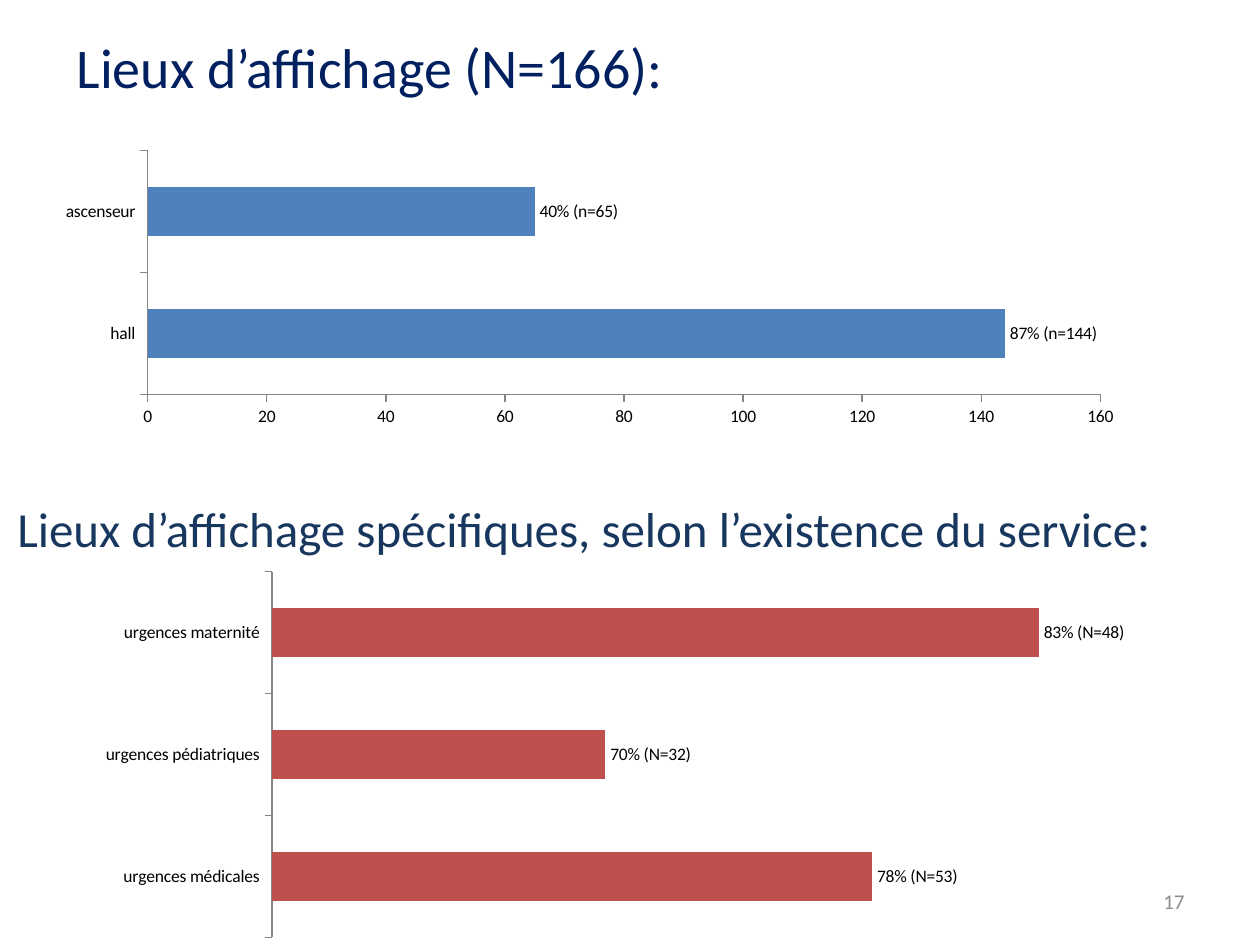
from dataclasses import dataclass

from lxml import etree
from pptx import Presentation, util as u
from pptx.chart.data import CategoryChartData
from pptx.dml.color import RGBColor
from pptx.enum import chart as ch, text as tx
from pptx.oxml.ns import qn


@dataclass(frozen=True)
class Theme:
    face: str = "Calibri"
    ink: str = "000000"
    navy: str = "002060"
    slate: str = "17375E"
    gray: str = "8C8C8C"
    rule: str = "868686"
    blue: str = "4F81BD"
    red: str = "C0504D"
    head: int = 32
    sub: int = 28
    foot: int = 12
    tiny: int = 10


class Deck:
    """Holds the theme and the current slide; boxes are shares of its size."""

    def __init__(self, theme, wide=10, high=7.5):
        self.theme = theme
        self.prs = Presentation()
        self.prs.slide_width = u.Inches(wide)
        self.prs.slide_height = u.Inches(high)
        self.page = self.prs.slides.add_slide(self.prs.slide_layouts[6])

    def place(self, box):
        wide, high = self.prs.slide_width, self.prs.slide_height
        return [round(part * side) for part, side in zip(box, (wide, high) * 2)]

    def style(self, font, size, color):
        for key, val in {"name": self.theme.face, "size": u.Pt(size)}.items():
            setattr(font, key, val)
        font.color.rgb = RGBColor.from_string(color)

    def text(self, box, words, size, color, align=None, **form):
        frame = self.page.shapes.add_textbox(*self.place(box)).text_frame
        for key, val in {"word_wrap": True, **form}.items():
            setattr(frame, key, val)
        para = frame.paragraphs[0]
        para.alignment = align
        run = para.add_run()
        run.text = words
        self.style(run.font, size, color)

    def bars(self, box, rows, color, plot, span, step=None, fmt="General"):
        """Draw rows of (category, value, label), from the bottom up."""
        t = self.theme
        data = CategoryChartData(number_format=fmt)
        data.categories = [row[0] for row in rows]
        data.add_series("Series 1", [row[1] for row in rows])
        chart = self.page.shapes.add_chart(
            ch.XL_CHART_TYPE.BAR_CLUSTERED, *self.place(box), data).chart
        chart.has_legend = chart.has_title = False
        self.style(chart.font, t.tiny, t.ink)

        # Axes
        for axis in (chart.category_axis, chart.value_axis):
            form = {"has_major_gridlines": False,
                    "major_tick_mark": ch.XL_TICK_MARK.OUTSIDE,
                    "minor_tick_mark": ch.XL_TICK_MARK.NONE}
            for key, val in form.items():
                setattr(axis, key, val)
            axis.format.line.color.rgb = RGBColor.from_string(t.rule)
            axis.format.line.width = u.Pt(0.75)
        scale = {"minimum_scale": span[0], "maximum_scale": span[1],
                 "major_unit": step, "visible": step is not None}
        for key, val in scale.items():
            setattr(chart.value_axis, key, val)
        chart.value_axis.tick_labels.number_format = fmt
        chart.value_axis.tick_labels.number_format_is_linked = False

        # Bars and their labels
        group = chart.plots[0]
        group.gap_width, group.vary_by_categories = 150, False
        series = group.series[0]
        series.format.fill.solid()
        series.format.fill.fore_color.rgb = RGBColor.from_string(color)
        labels = series.data_labels
        labels.show_value = True
        labels.number_format, labels.number_format_is_linked = fmt, False
        labels.position = ch.XL_LABEL_POSITION.OUTSIDE_END
        for spot, row in enumerate(rows):
            label = series.points[spot].data_label
            run = label.text_frame.paragraphs[0].add_run()
            run.text = row[2]
            self.style(run.font, t.tiny, t.ink)
            label.position = ch.XL_LABEL_POSITION.OUTSIDE_END
        self.frame(chart, plot)

    def frame(self, chart, plot):
        """Fix the inner plot area, as shares of the chart's size."""
        area = chart.element.find(".//" + qn("c:plotArea"))
        for old in area.findall(qn("c:layout")):
            area.remove(old)
        layout = etree.Element(qn("c:layout"))
        area.insert(0, layout)
        manual = etree.SubElement(layout, qn("c:manualLayout"))
        marks = {"layoutTarget": "inner", "xMode": "edge", "yMode": "edge",
                 **dict(zip("xywh", plot))}
        for tag, val in marks.items():
            etree.SubElement(manual, qn("c:" + tag)).set("val", str(val))


def main():
    t = Theme()
    deck = Deck(t)
    grow = {"auto_size": tx.MSO_AUTO_SIZE.SHAPE_TO_FIT_TEXT}

    # Page number
    deck.text((0.717, 0.927, 0.233, 0.053), "17", t.foot, t.gray,
              tx.PP_ALIGN.RIGHT, vertical_anchor=tx.MSO_ANCHOR.MIDDLE)

    # General display places
    deck.text((0.051, 0.028, 0.929, 0.085), "Lieux d’affichage (N=166):",
              t.head, t.navy, **grow)
    deck.bars((0.035, 0.153, 0.866, 0.304),
              [("hall", 144, "87% (n=144)"), ("ascenseur", 65, "40% (n=65)")],
              t.blue, (0.095, 0.02, 0.873, 0.85), (0, 160), 20)

    # Places that depend on the service
    deck.text((0.004, 0.521, 1.024, 0.076),
              "Lieux d’affichage spécifiques, selon l’existence du service:",
              t.sub, t.slate, **grow)
    deck.bars((0.067, 0.597, 0.827, 0.403),
              [("urgences médicales", 0.78, "78% (N=53)"),
               ("urgences pédiatriques", 0.7, "70% (N=32)"),
               ("urgences maternité", 0.83, "83% (N=48)")],
              t.red, (0.18, 0.02, 0.8, 0.96), (0.6, 0.85), fmt="0.00%")

    deck.prs.save("out.pptx")


if __name__ == "__main__":
    main()
